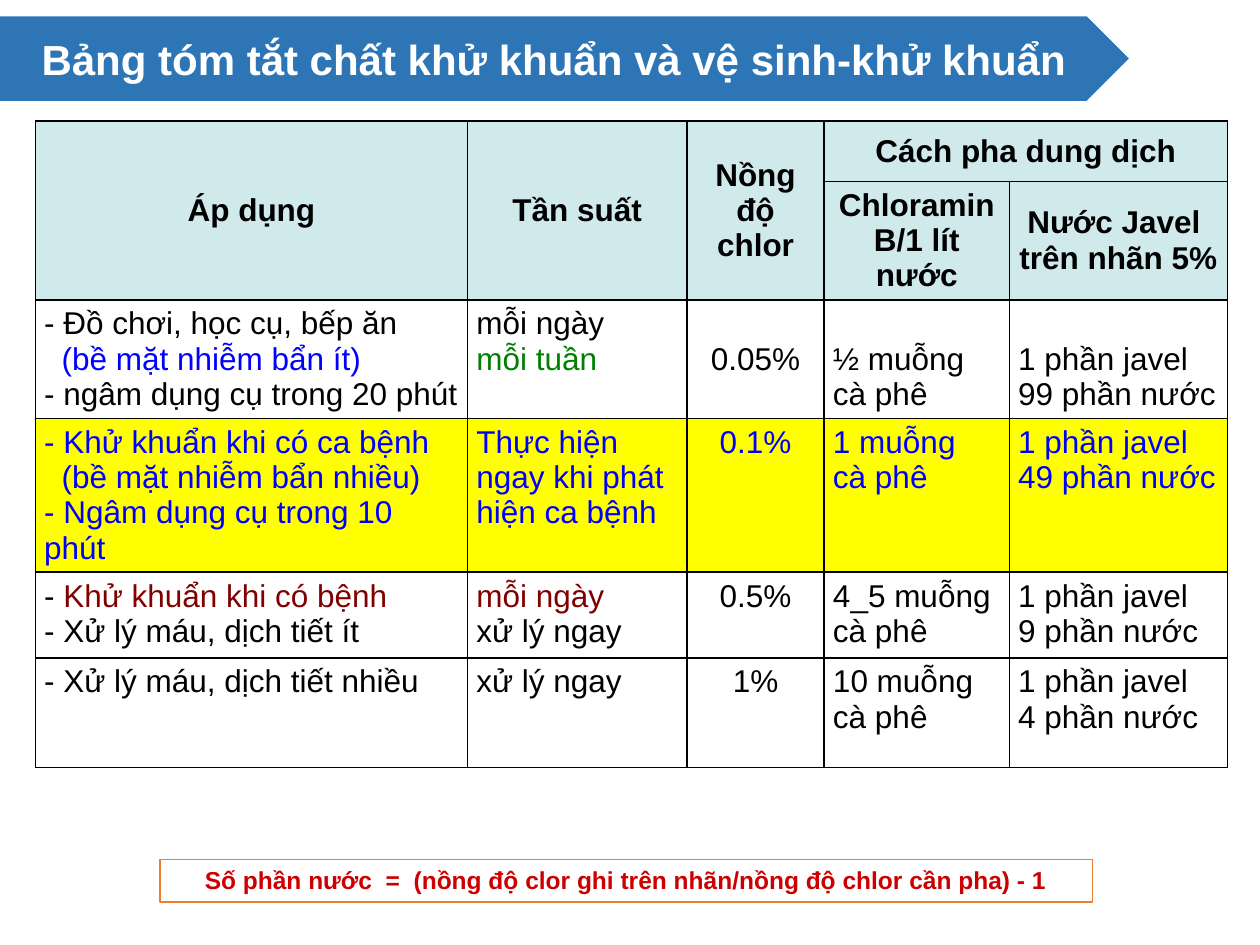
from lxml import etree
from pptx import Presentation
from pptx.dml.color import RGBColor
from pptx.enum.shapes import MSO_SHAPE
from pptx.enum.text import MSO_ANCHOR, MSO_AUTO_SIZE, PP_ALIGN
from pptx.oxml.ns import qn
from pptx.util import Pt

LEFT, CENTER = PP_ALIGN.LEFT, PP_ALIGN.CENTER
TOP, MIDDLE = MSO_ANCHOR.TOP, MSO_ANCHOR.MIDDLE
RECT, PENTAGON = MSO_SHAPE.RECTANGLE, MSO_SHAPE.PENTAGON
NO_FIT = MSO_AUTO_SIZE.NONE

COLORS = {
    "black": "000000", "white": "FFFFFF", "blue": "0000FF", "green": "008000",
    "maroon": "800000", "red": "CC0000", "yellow": "FFFF00", "header": "D0EAEC",
    "banner": "2E75B6", "orange": "ED7D31",
}
LINE_STEP = 20.2
INDENT = 10

COLUMN_WIDTHS = [247, 125.3, 78.5, 105.8, 124.6]
ROW_HEIGHTS = [34.6, 67.6, 67.6, 87.8, 49, 62.6]

# (row, column, row span, column span, lines)
HEADERS = [
    (0, 0, 2, 1, ["Áp dụng"]),
    (0, 1, 2, 1, ["Tần suất"]),
    (0, 2, 2, 1, ["Nồng", "độ", "chlor"]),
    (0, 3, 1, 2, ["Cách pha dung dịch"]),
    (1, 3, 1, 1, ["Chloramin B/1 lít nước"]),
    (1, 4, 1, 1, ["Nước Javel ", "trên nhãn 5% "]),
]
# A line is a string in the row's colour, or a list of (text, colour) runs.
# Lines that open with a bracket are indented.
BODY = [
    [["- Đồ chơi, học cụ, bếp ăn", [("(bề mặt nhiễm bẩn ít)", "blue")],
      "- ngâm dụng cụ trong 20 phút"],
     ["mỗi ngày", [("mỗi tuần", "green")]],
     ["0.05%"], ["½ muỗng", "cà phê"], ["1 phần javel", "99 phần nước"]],
    [["- Khử khuẩn khi có ca bệnh", "(bề mặt nhiễm bẩn nhiều)",
      "- Ngâm dụng cụ trong 10 phút"],
     ["Thực hiện ngay khi phát hiện ca bệnh"],
     ["0.1%"], ["1 muỗng", "cà phê"], ["1 phần javel", "49 phần nước"]],
    [[[("- ", "black"), ("Khử khuẩn khi có bệnh", "maroon")],
      "- Xử lý máu, dịch tiết ít"],
     [[("mỗi ngày", "maroon")], "xử lý ngay"],
     ["0.5%"], ["4_5 muỗng", "cà phê"], ["1 phần javel", "9 phần nước"]],
    [["- Xử lý máu, dịch tiết nhiều"], ["xử lý ngay"],
     ["1%"], ["10 muỗng", "cà phê"], ["1 phần javel", "4 phần nước"]],
]


def rgb(name):
    return RGBColor.from_string(COLORS[name])


class SlideBuilder:
    font = "Arial"

    def __init__(self, slide):
        self.slide = slide

    def text(self, tf, lines, size, color, bold=False, align=LEFT):
        tf.word_wrap = True
        for i, line in enumerate(lines):
            p = tf.paragraphs[0] if i == 0 else tf.add_paragraph()
            p.alignment = align
            runs = [(line, color)] if isinstance(line, str) else line
            if runs[0][0].startswith("("):
                p._p.get_or_add_pPr().set("marL", str(Pt(INDENT)))
            for content, run_color in runs:
                r = p.add_run()
                r.text = content
                r.font.name = self.font
                r.font.size = Pt(size)
                r.font.bold = bold
                r.font.color.rgb = rgb(run_color)

    def shape(self, kind, left, top, width, height, fill=None, line=None):
        sp = self.slide.shapes.add_shape(kind, Pt(left), Pt(top), Pt(width), Pt(height))
        sp.shadow.inherit = False
        if fill:
            sp.fill.solid()
            sp.fill.fore_color.rgb = rgb(fill)
        else:
            sp.fill.background()
        if line:
            sp.line.color.rgb = rgb(line)
            sp.line.width = Pt(0.75)
        else:
            sp.line.fill.background()
        return sp

    def title(self, content, left, top, width, height):
        sp = self.slide.shapes.title
        sp.left, sp.top, sp.width, sp.height = Pt(left), Pt(top), Pt(width), Pt(height)
        tf = sp.text_frame
        tf.auto_size = NO_FIT
        tf.vertical_anchor = MIDDLE
        self.text(tf, [content], 24, "white", bold=True, align=CENTER)

    def table(self, left, top, widths, heights):
        frame = self.slide.shapes.add_table(
            len(heights), len(widths), Pt(left), Pt(top), Pt(sum(widths)), Pt(sum(heights)))
        table = frame.table
        table.first_row = table.horz_banding = False
        for column, width in zip(table.columns, widths):
            column.width = Pt(width)
        for row, height in zip(table.rows, heights):
            row.height = Pt(height)
        for cell in table.iter_cells():
            self.border(cell)
        return table

    def border(self, cell):
        tcPr = cell._tc.get_or_add_tcPr()
        for side in ("a:lnL", "a:lnR", "a:lnT", "a:lnB"):
            ln = etree.SubElement(tcPr, qn(side), w=str(Pt(1)))
            fill = etree.SubElement(ln, qn("a:solidFill"))
            etree.SubElement(fill, qn("a:srgbClr"), val=COLORS["black"])

    def cell(self, cell, lines, fill, color="black", bold=False, align=LEFT,
             anchor=TOP, skip=0):
        """Fill one cell; skip is the number of lines left free at its top."""
        cell.fill.solid()
        cell.fill.fore_color.rgb = rgb(fill)
        cell.vertical_anchor = anchor
        cell.margin_left = cell.margin_right = Pt(5.04)
        cell.margin_top = Pt(3.6 + skip * LINE_STEP)
        cell.margin_bottom = Pt(3.6)
        self.text(cell.text_frame, lines, 18, color, bold, align)


def main():
    prs = Presentation()
    prs.slide_width, prs.slide_height = Pt(720), Pt(540)
    s = SlideBuilder(prs.slides.add_slide(prs.slide_layouts[5]))

    table = s.table(20.2, 69.1, COLUMN_WIDTHS, ROW_HEIGHTS)
    for row, col, row_span, col_span, lines in HEADERS:
        cell = table.cell(row, col)
        if row_span * col_span > 1:
            cell.merge(table.cell(row + row_span - 1, col + col_span - 1))
        s.cell(cell, lines, "header", bold=True, align=CENTER, anchor=MIDDLE)
    for i, row in enumerate(BODY):
        highlight = i == 1
        for col, lines in enumerate(row):
            s.cell(table.cell(i + 2, col), lines,
                   fill="yellow" if highlight else "white",
                   color="blue" if highlight else "black",
                   align=CENTER if col == 2 else LEFT,
                   skip=1 if i == 0 and col >= 2 else 0)

    formula = s.shape(RECT, 91.4, 491, 532.8, 24.5, line="orange")
    formula.text_frame.vertical_anchor = TOP
    s.text(formula.text_frame,
           ["Số phần nước  =  (nồng độ clor ghi trên nhãn/nồng độ chlor cần pha) - 1"],
           14, "red", bold=True, align=CENTER)

    banner = s.shape(PENTAGON, 0, 9.4, 645.1, 48.2, fill="banner")
    banner._element.addnext(s.slide.shapes.title._element)
    s.title("Bảng tóm tắt chất khử khuẩn và vệ sinh-khử khuẩn", 0, 9.4, 633, 48.2)

    prs.save("out.pptx")


if __name__ == "__main__":
    main()
